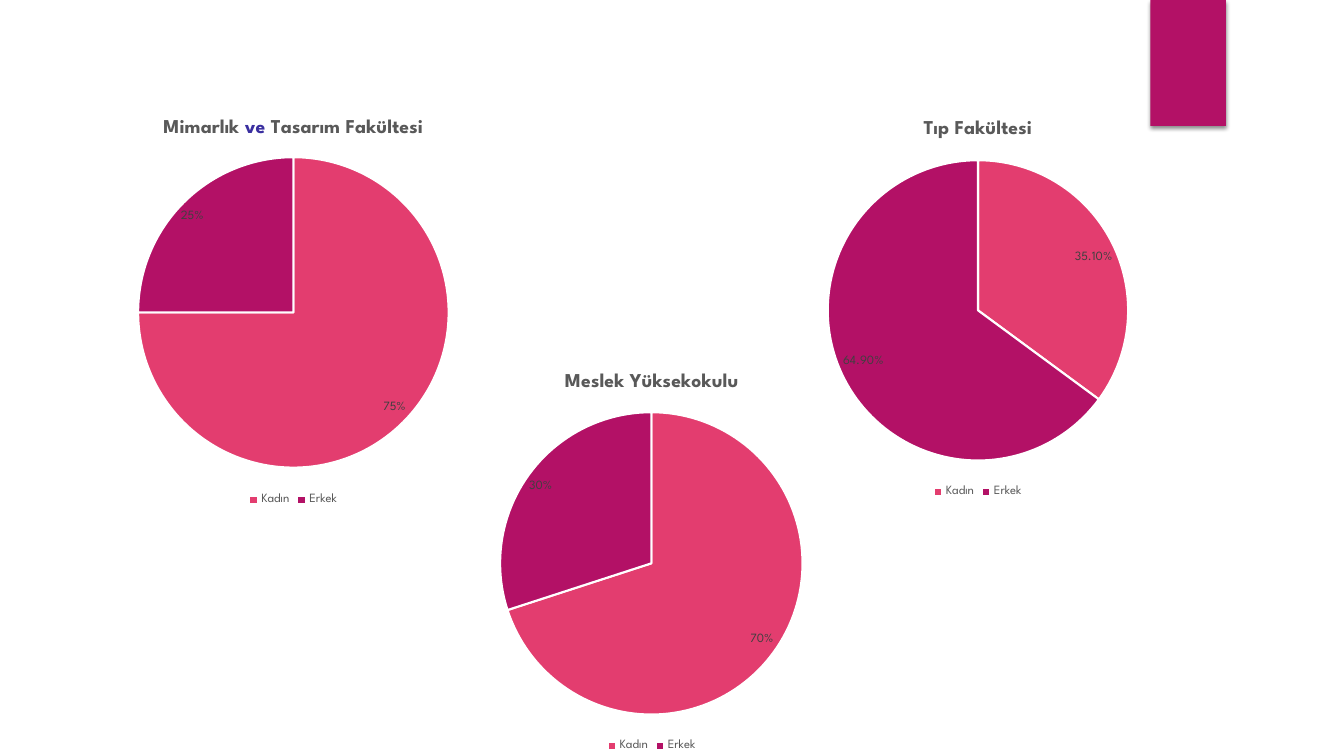
import dataclasses

import lxml.etree
import pptx
import pptx.chart.chart
import pptx.chart.data
import pptx.dml.color
import pptx.enum.chart
import pptx.enum.shapes
import pptx.oxml
import pptx.oxml.ns
import pptx.slide
import pptx.util

COLORS = {
    "women": "E33D6F",
    "men": "B31166",
    "accent": "B31166",
    "border": "FFFFFF",
    "heading": "595959",
    "highlight": "3A2FA0",
    "legend": "595959",
    "label": "404040",
}
FONT = "League Spartan"
GENDERS = {"Kadın": "women", "Erkek": "men"}


@dataclasses.dataclass
class FacultyPie:
    title: list[tuple[str, str]]
    box: tuple[float, float, float, float]
    center: tuple[float, float]
    radius: float
    shares: tuple[float, float]
    number_format: str = "0%"


FACULTIES = [
    FacultyPie(
        [("Mimarlık ", "heading"), ("ve", "highlight"), (" Tasarım Fakültesi", "heading")],
        (-0.4, 1.01, 6.62, 4.05), (2.91, 3.1), 1.54, (0.75, 0.25),
    ),
    FacultyPie(
        [("Tıp Fakültesi", "heading")],
        (6.22, 1.01, 6.96, 3.97), (9.7, 3.08), 1.49, (0.351, 0.649), "0.00%",
    ),
    FacultyPie(
        [("Meslek Yüksekokulu", "heading")],
        (3.13, 3.52, 6.67, 3.98), (6.46, 5.59), 1.5, (0.7, 0.3),
    ),
]


def rgb(name: str) -> pptx.dml.color.RGBColor:
    return pptx.dml.color.RGBColor.from_string(COLORS[name])


def format_font(font, color: str, size: float, bold: bool = False) -> None:
    values = {"name": FONT, "size": pptx.util.Pt(size), "bold": bold}
    for attribute, value in values.items():
        setattr(font, attribute, value)
    font.color.rgb = rgb(color)


def place_plot(chart: pptx.chart.chart.Chart, faculty: FacultyPie) -> None:
    """Fix the pie's bounding square as fractions of the chart box."""
    left, top, width, height = faculty.box
    x, y = faculty.center
    radius = faculty.radius
    fractions = {
        "x": (x - radius - left) / width,
        "y": (y - radius - top) / height,
        "w": 2 * radius / width,
        "h": 2 * radius / height,
    }
    plot_area = chart.plots[0]._element.getparent()
    for old_layout in plot_area.findall(pptx.oxml.ns.qn("c:layout")):
        plot_area.remove(old_layout)
    layout = pptx.oxml.parse_xml(
        f'<c:layout {pptx.oxml.ns.nsdecls("c")}><c:manualLayout>'
        '<c:layoutTarget val="inner"/><c:xMode val="edge"/><c:yMode val="edge"/>'
        + "".join(f'<c:{key} val="{value:.4f}"/>' for key, value in fractions.items())
        + "</c:manualLayout></c:layout>"
    )
    plot_area.insert(0, layout)


def draw_pie(slide: pptx.slide.Slide, faculty: FacultyPie) -> None:
    shares = pptx.chart.data.CategoryChartData(number_format=faculty.number_format)
    shares.categories = list(GENDERS)
    shares.add_series("Series 1", faculty.shares)
    chart = slide.shapes.add_chart(
        pptx.enum.chart.XL_CHART_TYPE.PIE,
        *(pptx.util.Inches(length) for length in faculty.box),
        shares,
    ).chart
    chart.font.name = FONT
    chart.font.size = pptx.util.Pt(10)

    # Heading
    chart.has_title = True
    heading = chart.chart_title.text_frame.paragraphs[0]
    for text, color in faculty.title:
        run = heading.add_run()
        run.text = text
        format_font(run.font, color, 14, bold=True)
    chart.chart_title.include_in_layout = False

    # Legend
    chart.has_legend = True
    chart.legend.position = pptx.enum.chart.XL_LEGEND_POSITION.BOTTOM
    chart.legend.include_in_layout = False
    format_font(chart.legend.font, "legend", 9)

    # Slices
    pie = chart.plots[0]
    pie.vary_by_categories = True
    for index, color in enumerate(GENDERS.values()):
        slice_format = pie.series[0].points[index].format
        slice_format.fill.solid()
        slice_format.fill.fore_color.rgb = rgb(color)
        slice_format.line.color.rgb = rgb("border")
        slice_format.line.width = pptx.util.Pt(1.5)

    # Share labels
    labels = pie.series[0].data_labels
    label_values = {
        "show_value": True,
        "show_percentage": False,
        "number_format": faculty.number_format,
        "number_format_is_linked": False,
        "position": pptx.enum.chart.XL_LABEL_POSITION.BEST_FIT,
    }
    for attribute, value in label_values.items():
        setattr(labels, attribute, value)
    format_font(labels.font, "label", 9)
    place_plot(chart, faculty)


def draw_ribbon(slide: pptx.slide.Slide) -> None:
    ribbon = slide.shapes.add_shape(
        pptx.enum.shapes.MSO_SHAPE.RECTANGLE,
        *(pptx.util.Inches(length) for length in (11.41, 0, 0.75, 1.25)),
    )
    ribbon.fill.solid()
    ribbon.fill.fore_color.rgb = rgb("accent")
    ribbon.line.fill.background()
    ribbon.shadow.inherit = False
    # Soft shadow falling straight down
    effects = ribbon._element.spPr.find(pptx.oxml.ns.qn("a:effectLst"))
    shadow = lxml.etree.SubElement(
        effects, pptx.oxml.ns.qn("a:outerShdw"),
        blurRad=str(pptx.util.Pt(3)), dist=str(pptx.util.Pt(2)),
        dir="5400000", rotWithShape="0",
    )
    tint = lxml.etree.SubElement(shadow, pptx.oxml.ns.qn("a:srgbClr"), val="000000")
    lxml.etree.SubElement(tint, pptx.oxml.ns.qn("a:alpha"), val="45000")


def main() -> None:
    presentation = pptx.Presentation()
    presentation.slide_width = pptx.util.Inches(13.33)
    presentation.slide_height = pptx.util.Inches(7.5)
    slide = presentation.slides.add_slide(presentation.slide_layouts.get_by_name("Blank"))
    draw_ribbon(slide)
    for faculty in FACULTIES:
        draw_pie(slide, faculty)
    presentation.save("out.pptx")


if __name__ == "__main__":
    main()
